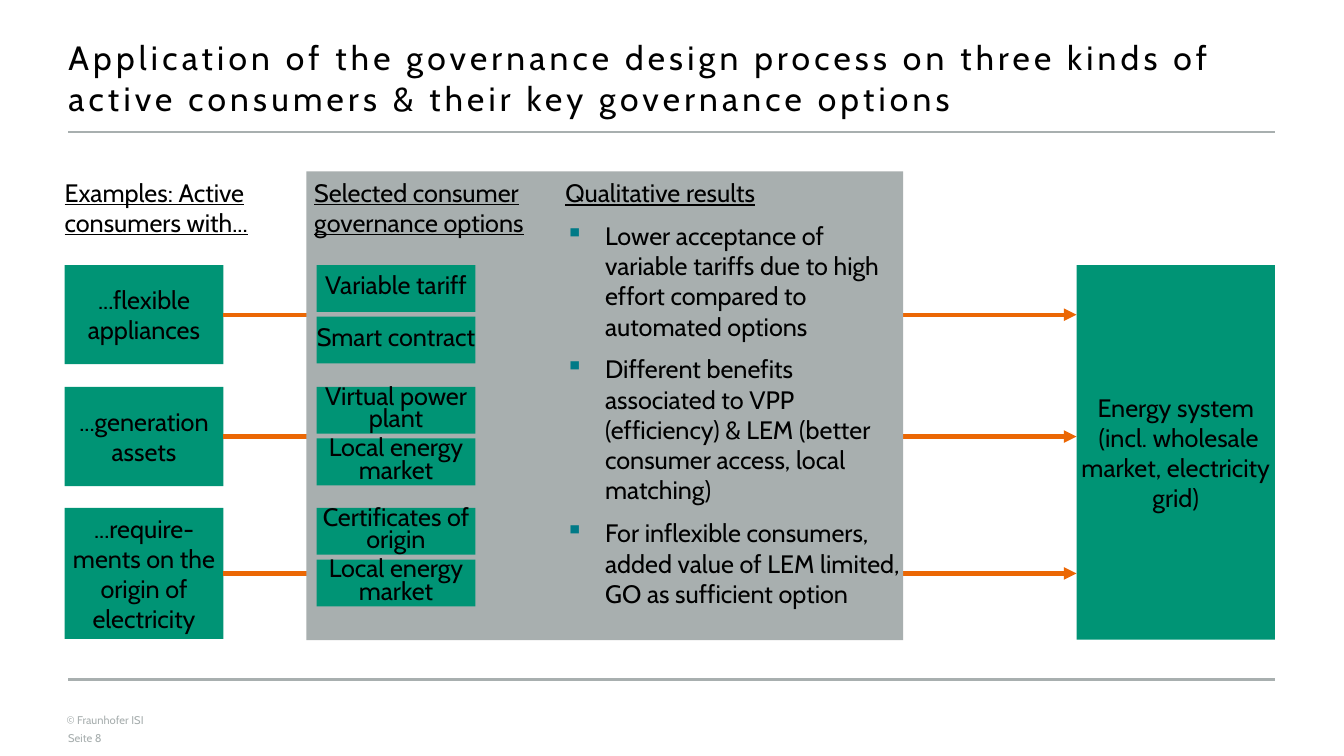
from dataclasses import dataclass

from lxml import etree
from pptx import Presentation
from pptx import util as u
from pptx.dml.color import RGBColor
from pptx.enum import shapes, text
from pptx.oxml import ns

FONT = "Cabin"
BLACK = RGBColor(0x00, 0x00, 0x00)
GREEN = RGBColor(0x00, 0x94, 0x75)
GREY = RGBColor(0xA8, 0xAF, 0xAF)
ORANGE = RGBColor(0xEB, 0x67, 0x04)
TEAL = "007A87"

MARGIN = 1.72
RIGHT = 32.13
BOX_LEFT = 1.63
BOX_WIDTH = 4
PANEL_TOP = 4.32
OPTION_LEFT = 7.98
OPTION_HEIGHT = 1.18
OPTION_STEP = 1.3
ENERGY_LEFT = 27.13


@dataclass
class Area:
    left: float
    top: float
    width: float
    height: float

    def lengths(self) -> list:
        return [u.Cm(v) for v in (self.left, self.top, self.width, self.height)]


@dataclass
class Consumer:
    label: str
    top: float
    height: float
    options: tuple


CONSUMERS = [
    Consumer("...flexible appliances", 6.68, 2.5, ("Variable tariff", "Smart contract")),
    Consumer("...generation assets", 9.75, 2.5, ("Virtual power plant", "Local energy market")),
    Consumer("...require-ments on the origin of electricity", 12.8, 3.3,
             ("Certificates of origin", "Local energy market")),
]
RESULTS = [
    "Lower acceptance of variable tariffs due to high effort compared to automated options",
    "Different benefits associated to VPP (efficiency) & LEM (better consumer access, local matching)",
    "For inflexible consumers, added value of LEM limited, GO as sufficient option",
]


def add_bullet(para) -> None:
    props = para._p.get_or_add_pPr()
    props.set("marL", str(u.Cm(1)))
    props.set("indent", str(-u.Cm(1)))
    colour = etree.SubElement(props, ns.qn("a:buClr"))
    etree.SubElement(colour, ns.qn("a:srgbClr")).set("val", TEAL)
    etree.SubElement(props, ns.qn("a:buChar")).set("char", "▪")


def write(shape, words, size=18, colour=BLACK, align=text.PP_ALIGN.LEFT,
          anchor=text.MSO_ANCHOR.TOP, after=9, leading=None, underline=False,
          bullet=False, tracking=0, append=False) -> None:
    frame = shape.text_frame
    frame.word_wrap = True
    frame.auto_size = text.MSO_AUTO_SIZE.NONE
    frame.vertical_anchor = anchor
    frame.margin_left = frame.margin_right = frame.margin_top = frame.margin_bottom = 0
    para = frame.add_paragraph() if append else frame.paragraphs[0]
    para.text = words
    para.alignment = align
    para.space_before = u.Pt(0)
    para.space_after = u.Pt(after)
    para.line_spacing = u.Pt(leading) if leading else 1.0
    if bullet:
        add_bullet(para)
    for span in para.runs:
        span.font.name = FONT
        span.font.size = u.Pt(size)
        span.font.color.rgb = colour
        span.font.underline = underline
        if tracking:
            span._r.get_or_add_rPr().set("spc", str(tracking * 100))


def add_text(page, words: str, area: Area, **style):
    box = page.shapes.add_textbox(*area.lengths())
    write(box, words, **style)
    return box


def add_block(page, area: Area, fill: RGBColor, words: str = "", **style) -> None:
    block = page.shapes.add_shape(shapes.MSO_SHAPE.RECTANGLE, *area.lengths())
    block.shadow.inherit = False
    block.fill.solid()
    block.fill.fore_color.rgb = fill
    block.line.fill.background()
    if words:
        write(block, words, align=text.PP_ALIGN.CENTER, anchor=text.MSO_ANCHOR.MIDDLE, **style)


def add_line(page, left: float, right: float, y: float, colour: RGBColor,
             width: float, arrow: bool = False) -> None:
    line = page.shapes.add_connector(shapes.MSO_CONNECTOR.STRAIGHT,
                                     u.Cm(left), u.Cm(y), u.Cm(right), u.Cm(y))
    line.line.color.rgb = colour
    line.line.width = u.Pt(width)
    if arrow:
        etree.SubElement(line.line._get_or_add_ln(), ns.qn("a:tailEnd")).set("type", "triangle")
    etree.SubElement(line._element.spPr, ns.qn("a:effectLst"))


def add_frame(page) -> None:
    title = page.shapes.title
    title.left, title.top, title.width, title.height = Area(MARGIN, 0.94, 30.41, 2.06).lengths()
    write(title, "Application of the governance design process on three kinds of "
          "active consumers & their key governance options", size=24, after=0, tracking=3)
    add_line(page, MARGIN, RIGHT, 3.33, GREY, 1)
    add_line(page, MARGIN, RIGHT, 17.12, GREY, 2.5)
    add_text(page, "© Fraunhofer ISI", Area(1.68, 17.98, 3.33, 0.33), size=8, colour=GREY, after=0)
    add_text(page, "Seite 8", Area(MARGIN, 18.43, 6.65, 0.33), size=8, colour=GREY, after=0)


def add_process(page) -> None:
    for consumer in CONSUMERS:
        add_block(page, Area(BOX_LEFT, consumer.top, BOX_WIDTH, consumer.height),
                  GREEN, consumer.label)
        add_line(page, BOX_LEFT + BOX_WIDTH, ENERGY_LEFT, consumer.top + consumer.height / 2,
                 ORANGE, 3, arrow=True)
    add_block(page, Area(ENERGY_LEFT, 6.68, 5, 9.44), GREEN,
              "Energy system\n (incl. wholesale market, electricity grid)")
    add_block(page, Area(7.72, PANEL_TOP, 15.04, 11.81), GREY)
    for consumer in CONSUMERS:
        for row, option in enumerate(consumer.options):
            add_block(page, Area(OPTION_LEFT, consumer.top + row * OPTION_STEP,
                                 BOX_WIDTH, OPTION_HEIGHT), GREEN, option, leading=16)


def add_headings(page) -> None:
    middle = text.MSO_ANCHOR.MIDDLE
    add_text(page, "Examples: Active consumers with...", Area(BOX_LEFT, PANEL_TOP, 5.2, 1.8),
             anchor=middle, underline=True)
    add_text(page, "Selected consumer governance options", Area(7.92, PANEL_TOP, 6.2, 1.8),
             anchor=middle, underline=True)
    results = add_text(page, "Qualitative results", Area(14.25, 4.47, 8.49, 1.8), underline=True)
    for result in RESULTS:
        write(results, result, bullet=True, append=True)


def main() -> None:
    deck = Presentation()
    deck.slide_width, deck.slide_height = u.Cm(33.87), u.Cm(19.05)
    page = deck.slides.add_slide(deck.slide_layouts[5])
    add_frame(page)
    add_process(page)
    add_headings(page)
    deck.save("out.pptx")


if __name__ == "__main__":
    main()
